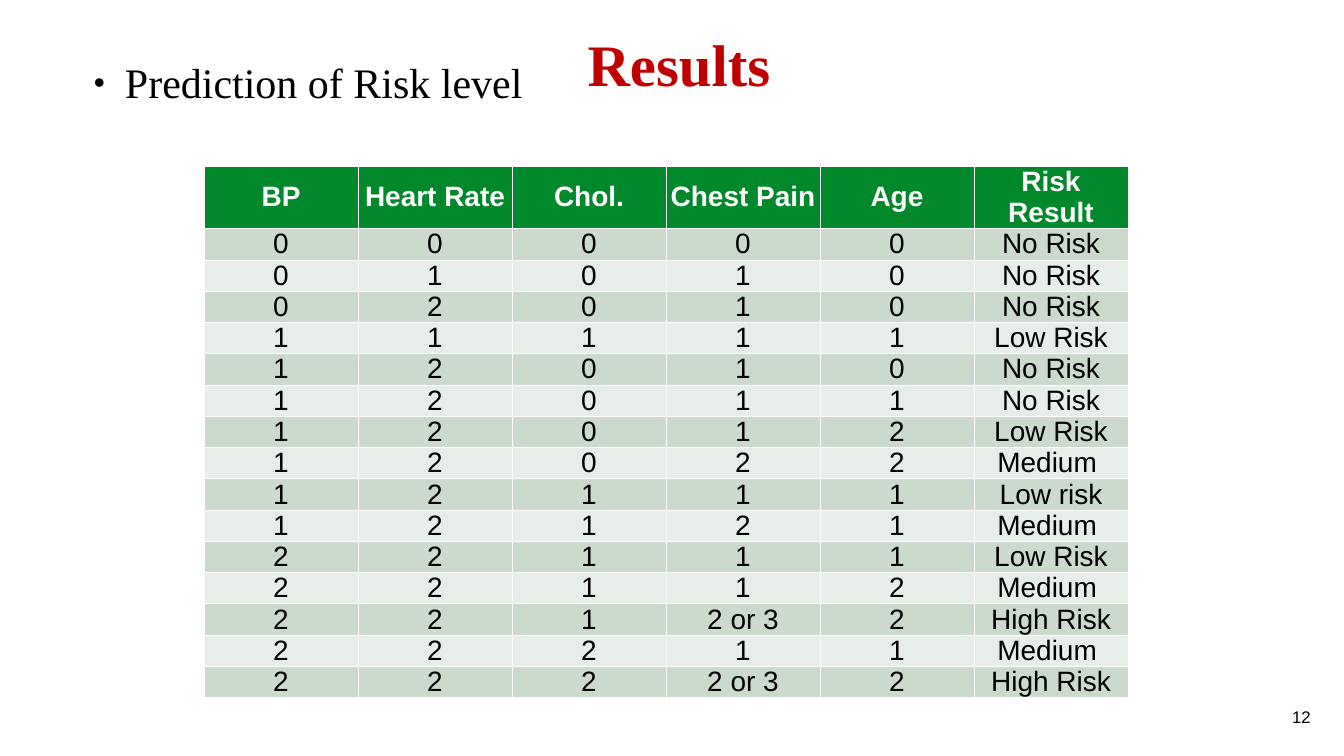
import pptx
import pptx.dml.color
import pptx.enum.text
import pptx.oxml
import pptx.oxml.ns
import pptx.util

PX = 18143  # EMU per px
COLORS = {
    "title": "C00000",
    "text": "000000",
    "header": "00882B",
    "header_text": "FFFFFF",
    "odd_row": "CCDACD",
    "even_row": "E7EDE8",
    "border": "FFFFFF",
}
SERIF, SANS = "Times New Roman", "Arial"
CENTER = pptx.enum.text.PP_ALIGN.CENTER
MIDDLE = pptx.enum.text.MSO_ANCHOR.MIDDLE
TOP = pptx.enum.text.MSO_ANCHOR.TOP
NO_FIT = pptx.enum.text.MSO_AUTO_SIZE.NONE
GROW = pptx.enum.text.MSO_AUTO_SIZE.SHAPE_TO_FIT_TEXT

HEADINGS = ["BP", "Heart Rate", "Chol.", "Chest Pain", "Age", "Risk Result"]
PREDICTIONS = [
    ["0", "0", "0", "0", "0", "No Risk"],
    ["0", "1", "0", "1", "0", "No Risk"],
    ["0", "2", "0", "1", "0", "No Risk"],
    ["1", "1", "1", "1", "1", "Low Risk"],
    ["1", "2", "0", "1", "0", "No Risk"],
    ["1", "2", "0", "1", "1", "No Risk"],
    ["1", "2", "0", "1", "2", "Low Risk"],
    ["1", "2", "0", "2", "2", "Medium "],
    ["1", "2", "1", "1", "1", "Low risk"],
    ["1", "2", "1", "2", "1", "Medium "],
    ["2", "2", "1", "1", "1", "Low Risk"],
    ["2", "2", "1", "1", "2", "Medium "],
    ["2", "2", "1", "2 or 3", "2", "High Risk"],
    ["2", "2", "2", "1", "1", "Medium "],
    ["2", "2", "2", "2 or 3", "2", "High Risk"],
]


def px(length):
    return pptx.util.Emu(length * PX)


def assign(target, values):
    for name, value in values.items():
        setattr(target, name, value)


class ResultsDeck:
    def __init__(self, width, height):
        self.deck = pptx.Presentation()
        assign(self.deck, {"slide_width": px(width), "slide_height": px(height)})
        self.slide = self.deck.slides.add_slide(self.deck.slide_layouts[1])

    def add_text(self, frame, text, font, size, color, bold=False, **paragraph_format):
        paragraph = frame.paragraphs[0]
        assign(paragraph, paragraph_format)
        run = paragraph.add_run()
        run.text = text
        assign(run.font, {"name": font, "size": pptx.util.Pt(size), "bold": bold})
        run.font.color.rgb = pptx.dml.color.RGBColor.from_string(COLORS[color])
        return paragraph

    def place(self, shape, left, top, width, height, **frame_format):
        assign(shape, {"left": px(left), "top": px(top),
                       "width": px(width), "height": px(height)})
        margins = {f"margin_{side}": px(3) for side in ("left", "top", "right", "bottom")}
        assign(shape.text_frame, {**margins, **frame_format})
        return shape.text_frame

    def title(self, text, *box):
        frame = self.place(self.slide.shapes.title, *box, word_wrap=True,
                           auto_size=NO_FIT, vertical_anchor=MIDDLE)
        self.add_text(frame, text, SERIF, 84, "title", bold=True, alignment=CENTER,
                      space_before=pptx.util.Pt(12))

    def bullet(self, text, *box):
        frame = self.place(self.slide.placeholders[1], *box, word_wrap=True,
                           auto_size=NO_FIT, vertical_anchor=TOP)
        paragraph = self.add_text(frame, text, SERIF, 60, "text", line_spacing=0.9,
                                  space_before=pptx.util.Pt(45))
        properties = paragraph._p.get_or_add_pPr()
        properties.set("marL", str(px(31)))
        properties.set("indent", str(-px(31)))
        for tag, name, value in (("buSzPct", "val", "75000"), ("buFont", "typeface", SANS),
                                 ("buChar", "char", "•")):
            mark = pptx.oxml.parse_xml(f'<a:{tag} {pptx.oxml.ns.nsdecls("a")} {name}="{value}"/>')
            properties.append(mark)

    def page_number(self, text, *box):
        label = self.slide.shapes.add_textbox(*map(px, box))
        frame = self.place(label, *box, word_wrap=False, auto_size=GROW)
        self.add_text(frame, text, SANS, 24, "text", alignment=CENTER)

    def border(self, cell, **points):
        """Draw the cell's sides, given as L, R, T, B widths in points."""
        for side, width in points.items():
            cell._tc.get_or_add_tcPr().append(pptx.oxml.parse_xml(
                f'<a:ln{side} {pptx.oxml.ns.nsdecls("a")} w="{pptx.util.Pt(width)}">'
                f'<a:solidFill><a:srgbClr val="{COLORS["border"]}"/></a:solidFill></a:ln{side}>'))

    def table(self, rows, left, top, width, height, header_height, row_height):
        holder = self.slide.shapes.add_table(
            len(rows), len(rows[0]), *map(px, (left, top, width, height)))
        for number, values in enumerate(rows):
            header = number == 0
            holder.table.rows[number].height = px(header_height if header else row_height)
            fill = "header" if header else "odd_row" if number % 2 else "even_row"
            for column, value in enumerate(values):
                cell = holder.table.cell(number, column)
                assign(cell, {"margin_left": px(4), "margin_right": px(4), "margin_top": 0,
                              "margin_bottom": 0, "vertical_anchor": MIDDLE})
                self.border(cell, L=1, R=1, T=3 if number == 1 else 1, B=3 if header else 1)
                cell.fill.solid()
                cell.fill.fore_color.rgb = pptx.dml.color.RGBColor.from_string(COLORS[fill])
                self.add_text(cell.text_frame, value, SANS, 40,
                              "header_text" if header else "text", bold=header, alignment=CENTER)
        holder.height = px(height)


def main():
    results = ResultsDeck(1344, 756)
    results.table([HEADINGS] + PREDICTIONS, 204, 166, 924, 571, header_height=36, row_height=21)
    results.title("Results", 100, 0, 1158, 126)
    results.bullet("Prediction of Risk level", 91, 59, 1149, 101)
    results.page_number("12", 1289, 704, 25, 26)
    results.deck.save("out.pptx")


if __name__ == "__main__":
    main()
